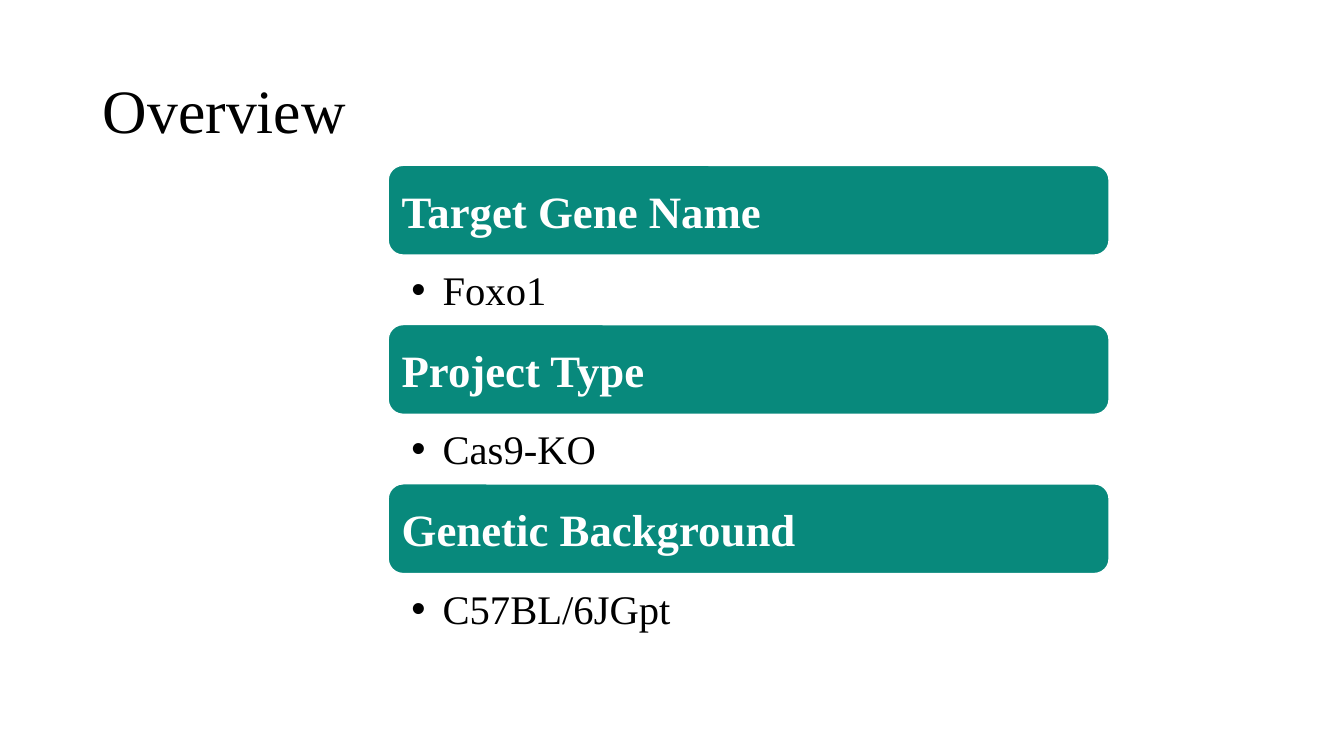
from dataclasses import dataclass

from lxml import etree
from pptx import Presentation
from pptx import util as u
from pptx.dml.color import RGBColor
from pptx.enum import shapes, text
from pptx.oxml.ns import qn

PX = 9144
TEAL = RGBColor(0x08, 0x89, 0x7C)
WHITE = RGBColor(0xFF, 0xFF, 0xFF)
BLACK = RGBColor(0, 0, 0)
FONT = "Times New Roman"

LEFT, TOP, WIDTH, PITCH = 385, 164, 715, 158
BAR_H, DETAIL_H = 89, 69
INDENT = 31


@dataclass(frozen=True)
class Section:
    heading: str
    detail: str


SECTIONS = [
    Section("Target Gene Name", "Foxo1"),
    Section("Project Type", "Cas9-KO"),
    Section("Genetic Background", "C57BL/6JGpt"),
]


def px(n: int) -> u.Emu:
    return u.Emu(n * PX)


def set_text(sp, content: str, size: int, color: RGBColor, bold: bool,
             anchor, margins: tuple[int, int, int, int]):
    tf = sp.text_frame
    sides = ("left", "top", "right", "bottom")
    frame = {f"margin_{side}": px(m) for side, m in zip(sides, margins)}
    frame |= {"word_wrap": True, "auto_size": text.MSO_AUTO_SIZE.NONE,
              "vertical_anchor": anchor}
    for name, value in frame.items():
        setattr(tf, name, value)
    p = tf.paragraphs[0]
    p.alignment = text.PP_ALIGN.LEFT
    r = p.add_run()
    r.text = content
    for name, value in {"name": FONT, "size": u.Pt(size), "bold": bold}.items():
        setattr(r.font, name, value)
    r.font.color.rgb = color
    return p


def add_bullet(p) -> None:
    ppr = p._p.get_or_add_pPr()
    ppr.set("marL", str(px(INDENT)))
    ppr.set("indent", str(px(-INDENT)))
    etree.SubElement(ppr, qn("a:buFont")).set("typeface", "Arial")
    etree.SubElement(ppr, qn("a:buChar")).set("char", "•")


def add_section(s, section: Section, top: int) -> None:
    sp = s.shapes.add_shape(shapes.MSO_SHAPE.ROUNDED_RECTANGLE,
                            px(LEFT), px(top), px(WIDTH), px(BAR_H))
    sp.shadow.inherit = False
    sp.fill.solid()
    sp.fill.fore_color.rgb = TEAL
    sp.line.color.rgb = WHITE
    sp.line.width = u.Pt(1)
    set_text(sp, section.heading, 32, WHITE, True,
             text.MSO_ANCHOR.MIDDLE, (9, 9, 9, 9))

    sp = s.shapes.add_textbox(px(LEFT), px(top + BAR_H), px(WIDTH), px(DETAIL_H))
    p = set_text(sp, section.detail, 29, BLACK, False,
                 text.MSO_ANCHOR.TOP, (23, 10, 30, 5))
    add_bullet(p)


def main() -> None:
    prs = Presentation()
    prs.slide_width, prs.slide_height = px(1333), px(750)
    s = prs.slides.add_slide(prs.slide_layouts[5])

    title = s.shapes.title
    box = {"left": 92, "top": 40, "width": 1150, "height": 145}
    for name, value in box.items():
        setattr(title, name, px(value))
    p = set_text(title, "Overview", 44, BLACK, False,
                 text.MSO_ANCHOR.MIDDLE, (10, 5, 10, 5))
    p.line_spacing = 0.9

    for i, section in enumerate(SECTIONS):
        add_section(s, section, TOP + i * PITCH)

    prs.save("out.pptx")


if __name__ == "__main__":
    main()
